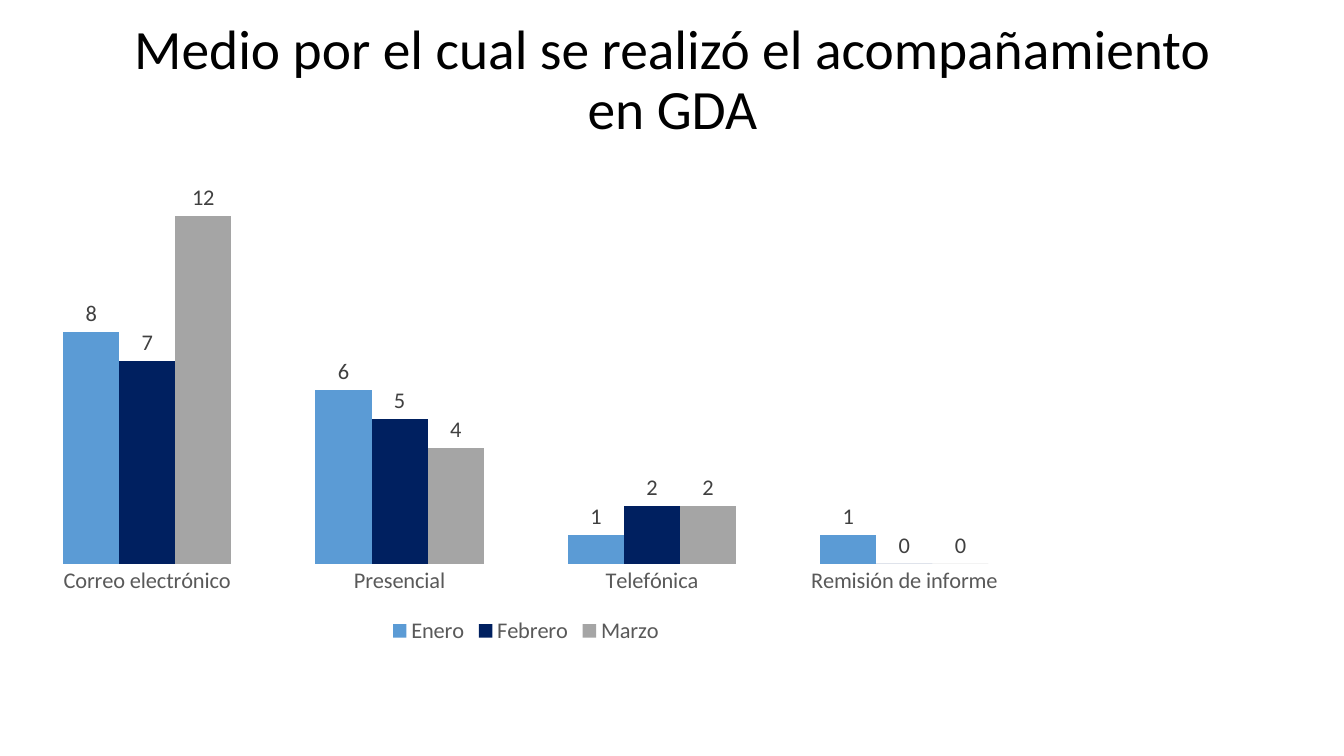
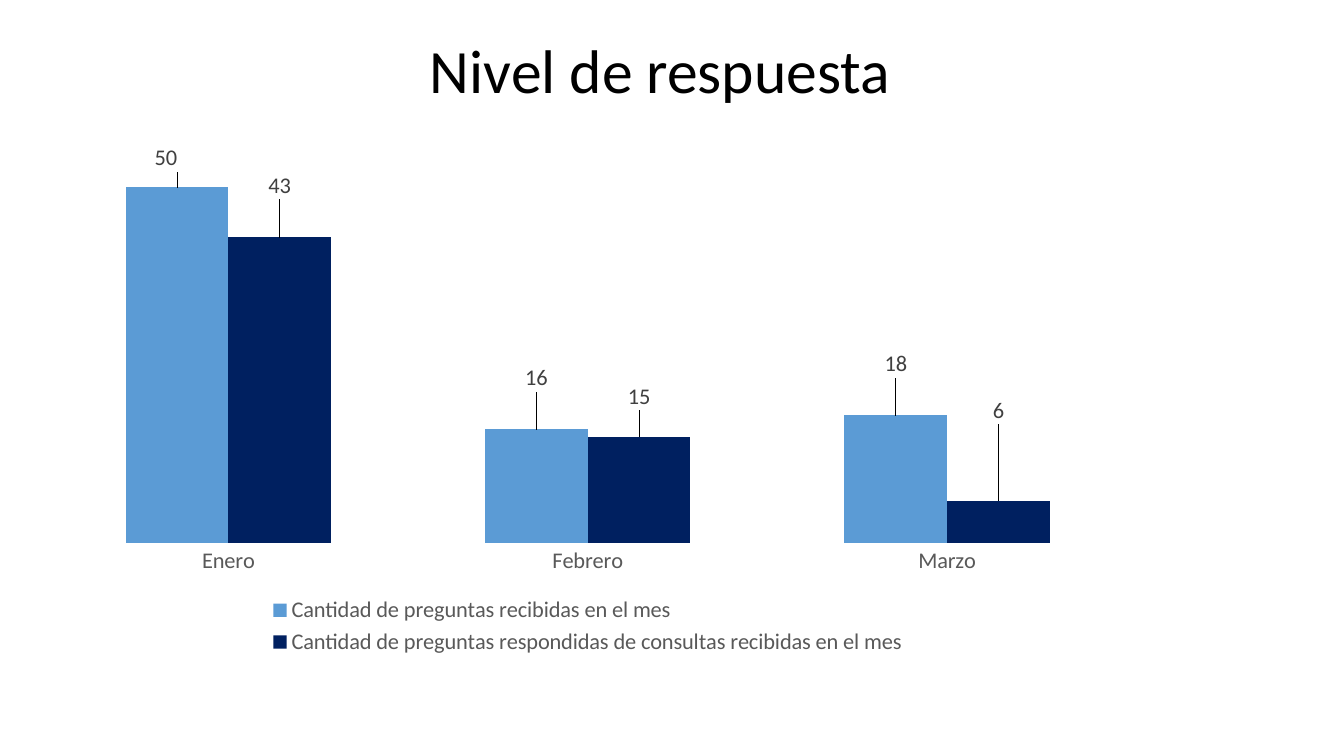
"""Build two slides on follow-up channels and response level, each a title over a column chart."""
from pptx import Presentation
from pptx.chart.data import CategoryChartData
from pptx.dml.color import RGBColor
from pptx.enum.chart import XL_CHART_TYPE, XL_LABEL_POSITION, XL_LEGEND_POSITION, XL_TICK_MARK
from pptx.enum.text import MSO_ANCHOR, PP_ALIGN
from pptx.oxml import parse_xml
from pptx.util import Inches, Pt

FONT = "Calibri"
TITLE_COLOR, AXIS_COLOR, LABEL_COLOR = "000000", "595959", "404040"
SERIES_COLORS = ["5B9BD5", "002060", "A5A5A5"]
CHART_TEXT = 16
TITLE_WIDTH, TITLE_HEIGHT = 11.5, 1.45
CHART_NS = "http://schemas.openxmlformats.org/drawingml/2006/chart"

SLIDES = [
    {
        "title": "Medio por el cual se realizó el acompañamiento en GDA",
        "title_at": (0.92, 0.08),
        "title_size": 39.6,
        "chart_at": (0, 1.47, 10.43, 4.97),
        "plot_height": 0.81,
        "axis_max": 14,
        "categories": ["Correo electrónico", "Presencial", "Telefónica", "Remisión de informe"],
        "series": {"Enero": (8, 6, 1, 1), "Febrero": (7, 5, 2, 0), "Marzo": (12, 4, 2, 0)},
        "label_shifts": [],
    },
    {
        "title": "Nivel de respuesta",
        "title_at": (0.8, 0),
        "title_size": 44,
        "chart_at": (0.26, 1.04, 11.14, 5.51),
        "plot_height": 0.77,
        "axis_max": 60,
        "categories": ["Enero", "Febrero", "Marzo"],
        "series": {
            "Cantidad de preguntas recibidas en el mes": (50, 16, 18),
            "Cantidad de preguntas respondidas de consultas recibidas en el mes": (43, 15, 6),
        },
        "label_shifts": [
            [(-0.01, -0.02), (0, -0.06), (0, -0.06)],
            [(0, -0.06), (0, -0.04), (0, -0.13)],
        ],
    },
]


def rgb(value):
    return RGBColor.from_string(value)


def style_font(font, size, color):
    font.name, font.size = FONT, Pt(size)
    font.color.rgb = rgb(color)


def manual_layout(**settings):
    tags = "".join(f'<c:{tag} val="{value}"/>' for tag, value in settings.items())
    return parse_xml(f'<c:layout xmlns:c="{CHART_NS}"><c:manualLayout>{tags}</c:manualLayout></c:layout>')


def add_title(slide, content):
    left, top = content["title_at"]
    frame = slide.shapes.add_textbox(
        Inches(left), Inches(top), Inches(TITLE_WIDTH), Inches(TITLE_HEIGHT)).text_frame
    frame.word_wrap = True
    frame.vertical_anchor = MSO_ANCHOR.MIDDLE
    title = frame.paragraphs[0]
    title.text = content["title"]
    title.alignment = PP_ALIGN.CENTER
    title.line_spacing = 0.9
    style_font(title.font, content["title_size"], TITLE_COLOR)


def place_plot(chart, height):
    plot_area = chart.plots[0]._element.getparent()
    for layout in plot_area.findall(f"{{{CHART_NS}}}layout"):
        plot_area.remove(layout)
    plot_area.insert(0, manual_layout(
        layoutTarget="inner", xMode="edge", yMode="edge", x=0.02, y=0.02, w=0.96, h=height))


def shift_labels(series, shifts):
    for index, (x, y) in enumerate(shifts):
        label = series.points[index].data_label
        style_font(label.font, CHART_TEXT, LABEL_COLOR)
        label.position = XL_LABEL_POSITION.OUTSIDE_END
    for entry, (x, y) in zip(series._element.xpath("c:dLbls/c:dLbl"), shifts):
        entry.insert(1, manual_layout(x=x, y=y))


def add_column_chart(slide, content):
    data = CategoryChartData()
    data.categories = content["categories"]
    for name, values in content["series"].items():
        data.add_series(name, values)
    chart = slide.shapes.add_chart(
        XL_CHART_TYPE.COLUMN_CLUSTERED, *map(Inches, content["chart_at"]), data).chart
    style_font(chart.font, CHART_TEXT, AXIS_COLOR)
    chart.has_title = False
    chart.has_legend = True
    chart.legend.position = XL_LEGEND_POSITION.BOTTOM
    chart.legend.include_in_layout = False
    style_font(chart.legend.font, CHART_TEXT, AXIS_COLOR)

    months = chart.category_axis
    months.major_tick_mark = XL_TICK_MARK.NONE
    months.format.line.fill.background()
    style_font(months.tick_labels.font, CHART_TEXT, AXIS_COLOR)
    counts = chart.value_axis
    counts.minimum_scale, counts.maximum_scale = 0, content["axis_max"]
    counts.has_major_gridlines = False
    counts.visible = False

    columns = chart.plots[0]
    columns.gap_width, columns.overlap = 150, 0
    columns.vary_by_categories = False
    for series, color in zip(columns.series, SERIES_COLORS):
        series.format.fill.solid()
        series.format.fill.fore_color.rgb = rgb(color)
        labels = series.data_labels
        labels.show_value = True
        labels.position = XL_LABEL_POSITION.OUTSIDE_END
        style_font(labels.font, CHART_TEXT, LABEL_COLOR)
    for series, shifts in zip(columns.series, content["label_shifts"]):
        shift_labels(series, shifts)
    place_plot(chart, content["plot_height"])


def main():
    deck = Presentation()
    deck.slide_width, deck.slide_height = Inches(13.33), Inches(7.5)
    for content in SLIDES:
        slide = deck.slides.add_slide(deck.slide_layouts[6])
        add_title(slide, content)
        add_column_chart(slide, content)
    deck.save("out.pptx")


if __name__ == "__main__":
    main()
